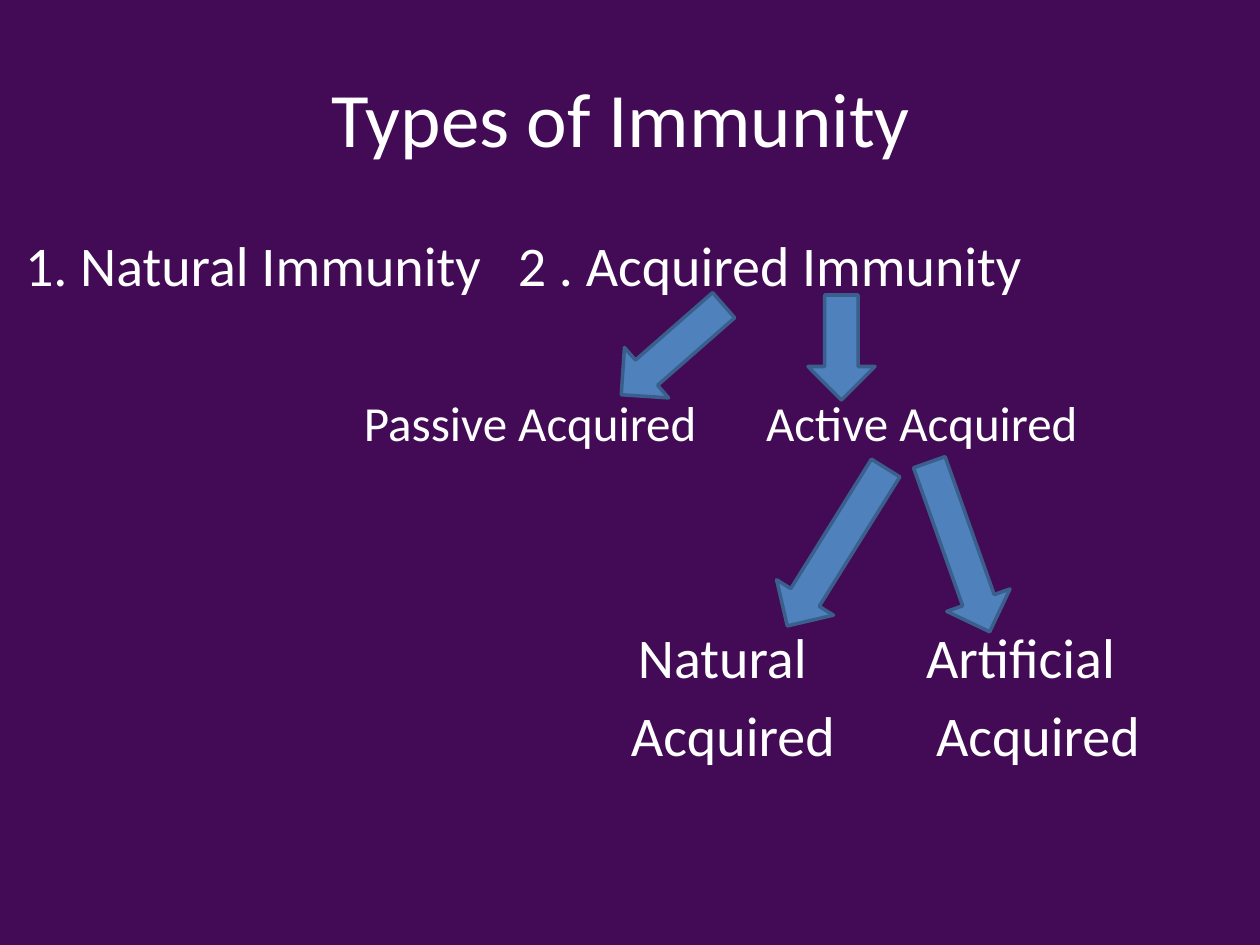
"""Build a slide that sorts immunity into its types."""
from pptx import Presentation
from pptx.dml.color import RGBColor
from pptx.enum.shapes import MSO_SHAPE
from pptx.enum.text import MSO_ANCHOR, PP_ALIGN
from pptx.util import Pt

PURPLE = RGBColor(0x43, 0x0B, 0x55)
WHITE = RGBColor(0xFF, 0xFF, 0xFF)
BLUE = RGBColor(0x4F, 0x81, 0xBD)
NAVY = RGBColor(0x3A, 0x5F, 0x8C)
LABELS = [
    (25, 230, 460, 32, [(0, "1. Natural Immunity")]),
    (518, 230, 510, 32, [(0, "2 . Acquired Immunity")]),
    (364, 392, 340, 28, [(0, "Passive Acquired")]),
    (766, 392, 320, 28, [(0, "Active Acquired")]),
    (631, 622, 210, 32, [(7, "Natural"), (0, "Acquired")]),
    (926, 622, 220, 32, [(0, "Artificial"), (10, "Acquired")]),
]
ARROWS = [
    (639, 282, 136, 48.8),
    (808, 295, 105, 0),
    (803, 454, 186, 31.9),
    (926, 457, 180, 340.4),
]


def emu(px):
    return px * 914400 // 126


class Deck:
    def __init__(self, font="Calibri"):
        self.font = font
        self.show = Presentation()
        self.show.slide_width, self.show.slide_height = emu(1260), emu(945)
        self.slide = self.show.slides.add_slide(self.show.slide_layouts[5])
        fill = self.slide.background.fill
        fill.solid()
        fill.fore_color.rgb = PURPLE

    def style(self, para, size):
        para.font.name = self.font
        para.font.size = Pt(size)
        para.font.color.rgb = WHITE

    def title(self, x, y, w, h, text):
        box = self.slide.shapes.title
        box.left, box.top, box.width, box.height = map(emu, (x, y, w, h))
        frame = box.text_frame
        frame.text = text
        frame.vertical_anchor = MSO_ANCHOR.MIDDLE
        para = frame.paragraphs[0]
        para.alignment = PP_ALIGN.CENTER
        self.style(para, 44)

    def label(self, x, y, w, size, lines):
        high = 79 * len(lines)
        box = self.slide.shapes.add_textbox(*map(emu, (x, y, w, high)))
        frame = box.text_frame
        frame.word_wrap = True
        frame.margin_left = frame.margin_right = 0
        frame.margin_top = frame.margin_bottom = 0
        frame.text = "\n".join(text for _, text in lines)
        for para, (dent, _) in zip(frame.paragraphs, lines):
            para.space_after = Pt(size / 5)
            para._p.get_or_add_pPr().set("marL", str(emu(dent)))
            self.style(para, size)

    def arrow(self, x, y, h, turn):
        place = map(emu, (x, y, 67, h))
        shape = self.slide.shapes.add_shape(MSO_SHAPE.DOWN_ARROW, *place)
        shape.rotation = turn
        shape.shadow.inherit = False
        shape.fill.solid()
        shape.fill.fore_color.rgb = BLUE
        shape.line.color.rgb = NAVY
        shape.line.width = Pt(2)


def main():
    deck = Deck()
    deck.title(63, 38, 1134, 158, "Types of Immunity ")
    for label in LABELS:
        deck.label(*label)
    for arrow in ARROWS:
        deck.arrow(*arrow)
    deck.show.save("out.pptx")


if __name__ == "__main__":
    main()
